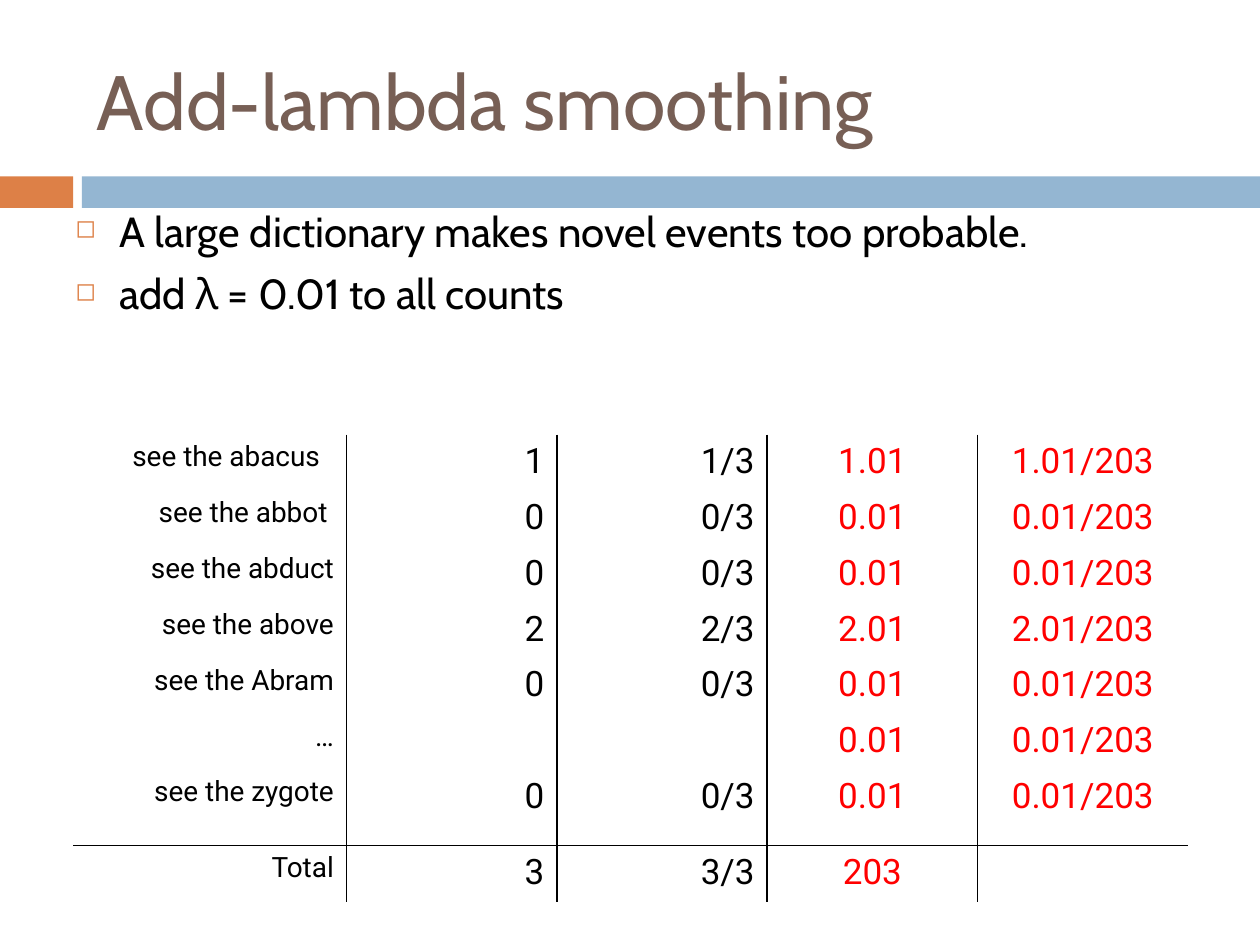
from lxml.etree import SubElement
from pptx import Presentation
from pptx.dml.color import RGBColor
from pptx.enum.shapes import MSO_SHAPE
from pptx.enum.text import MSO_ANCHOR, PP_ALIGN
from pptx.oxml import parse_xml
from pptx.oxml.ns import nsdecls, qn
from pptx.util import Inches, Pt

BLACK, RED, BROWN = "000000", "FF0000", "775F55"
ORANGE, BLUE = "DD8047", "94B6D2"

TITLE = "Add-lambda smoothing"
BULLETS = [
    "A large dictionary makes novel events too probable.",
    "add λ = 0.01 to all counts",
]
BANDS = [(0, 0.58, ORANGE), (0.65, 9.35, BLUE)]  # left, width, colour

# Event, count, estimate, smoothed count, smoothed estimate
COUNTS = [
    ("see the abacus", "1", "1/3", "1.01", "1.01/203"),
    ("see the abbot", "0", "0/3", "0.01", "0.01/203"),
    ("see the abduct", "0", "0/3", "0.01", "0.01/203"),
    ("see the above", "2", "2/3", "2.01", "2.01/203"),
    ("see the Abram", "0", "0/3", "0.01", "0.01/203"),
    ("…", "", "", "0.01", "0.01/203"),
    ("see the zygote", "0", "0/3", "0.01", "0.01/203"),
    ("Total", "3", "3/3", "203", ""),
]
EVENT_MARGINS = {0: 0.21, 1: 0.15}  # rows whose event sits further left
COLUMN_FORMATS = (
    [dict(size=16, align=PP_ALIGN.RIGHT)]
    + [dict(size=20, align=PP_ALIGN.RIGHT)] * 2
    + [dict(size=20, align=PP_ALIGN.CENTER, color=RED)] * 2
)
COLUMN_WIDTHS = [2.17] + [1.67] * 4
TABLE_HEIGHT, ZYGOTE_HEIGHT, TOTAL_HEIGHT = 3.71, 0.6, 0.45
EVENT_HEIGHT = (TABLE_HEIGHT - ZYGOTE_HEIGHT - TOTAL_HEIGHT) / 6
ROW_HEIGHTS = [EVENT_HEIGHT] * 6 + [ZYGOTE_HEIGHT, TOTAL_HEIGHT]


def rgb(color):
    return RGBColor.from_string(color)


def write(paragraph, text, size=20, font="Roboto", color=BLACK, align=PP_ALIGN.LEFT):
    paragraph.alignment = align
    run = paragraph.add_run()
    run.text = text
    run.font.size = Pt(size)
    run.font.name = font
    run.font.color.rgb = rgb(color)


def add_frame(slide, left, top, width, height):
    frame = slide.shapes.add_textbox(*map(Inches, (left, top, width, height))).text_frame
    frame.word_wrap = True
    return frame


def add_bullet(paragraph):
    properties = paragraph._p.get_or_add_pPr()
    properties.set("marL", str(Inches(0.35)))
    properties.set("indent", str(-Inches(0.35)))
    color = SubElement(properties, qn("a:buClr"))
    SubElement(color, qn("a:srgbClr"), val=ORANGE)
    SubElement(properties, qn("a:buSzPct"), val="60000")
    SubElement(properties, qn("a:buChar"), char="◻")


def set_borders(cell, sides):
    properties = cell._tc.get_or_add_tcPr()
    for position, side in enumerate("LRTB"):
        fill = "<a:noFill/>"
        if side in sides:
            fill = f'<a:solidFill><a:srgbClr val="{BLACK}"/></a:solidFill>'
        line = f'<a:ln{side} {nsdecls("a")} w="{Pt(1)}">{fill}</a:ln{side}>'
        properties.insert(position, parse_xml(line))


def main():
    deck = Presentation()
    deck.slide_width, deck.slide_height = Inches(10), Inches(7.5)
    slide = deck.slides.add_slide(deck.slide_layouts[6])

    # Bands under the title
    for left, width, color in BANDS:
        band = slide.shapes.add_shape(
            MSO_SHAPE.RECTANGLE, Inches(left), Inches(1.4), Inches(width), Inches(0.25))
        band.shadow.inherit = False
        band.fill.solid()
        band.fill.fore_color.rgb = rgb(color)
        band.line.fill.background()

    # Title
    title = add_frame(slide, 0.67, 0.25, 8.92, 1.08)
    title.vertical_anchor = MSO_ANCHOR.MIDDLE
    write(title.paragraphs[0], TITLE, size=44, font="Cabin", color=BROWN)

    # Bullets
    body = add_frame(slide, 0.5, 1.58, 9.33, 1.5)
    for index, text in enumerate(BULLETS):
        paragraph = body.add_paragraph() if index else body.paragraphs[0]
        paragraph.space_before = Pt(7)
        write(paragraph, text, size=24, font="Cabin")
        add_bullet(paragraph)

    # Table of counts
    counts = slide.shapes.add_table(
        len(COUNTS), len(COLUMN_WIDTHS), Inches(0.58), Inches(3.45),
        Inches(sum(COLUMN_WIDTHS)), Inches(TABLE_HEIGHT)).table
    counts.first_row = counts.horz_banding = False
    for column, width in zip(counts.columns, COLUMN_WIDTHS):
        column.width = Inches(width)
    for row, height in zip(counts.rows, ROW_HEIGHTS):
        row.height = Inches(height)

    last_row, last_column = len(COUNTS) - 1, len(COLUMN_WIDTHS) - 1
    for r, values in enumerate(COUNTS):
        for c, (value, text_format) in enumerate(zip(values, COLUMN_FORMATS)):
            cell = counts.cell(r, c)
            cell.fill.background()
            sides = "L" * (c > 0) + "R" * (c < last_column)
            sides += "B" * (r == last_row - 1) + "T" * (r == last_row)
            set_borders(cell, sides)
            if value:
                write(cell.text_frame.paragraphs[0], value, **text_format)
        if r in EVENT_MARGINS:
            counts.cell(r, 0).margin_right = Inches(EVENT_MARGINS[r])

    deck.save("out.pptx")


if __name__ == "__main__":
    main()
